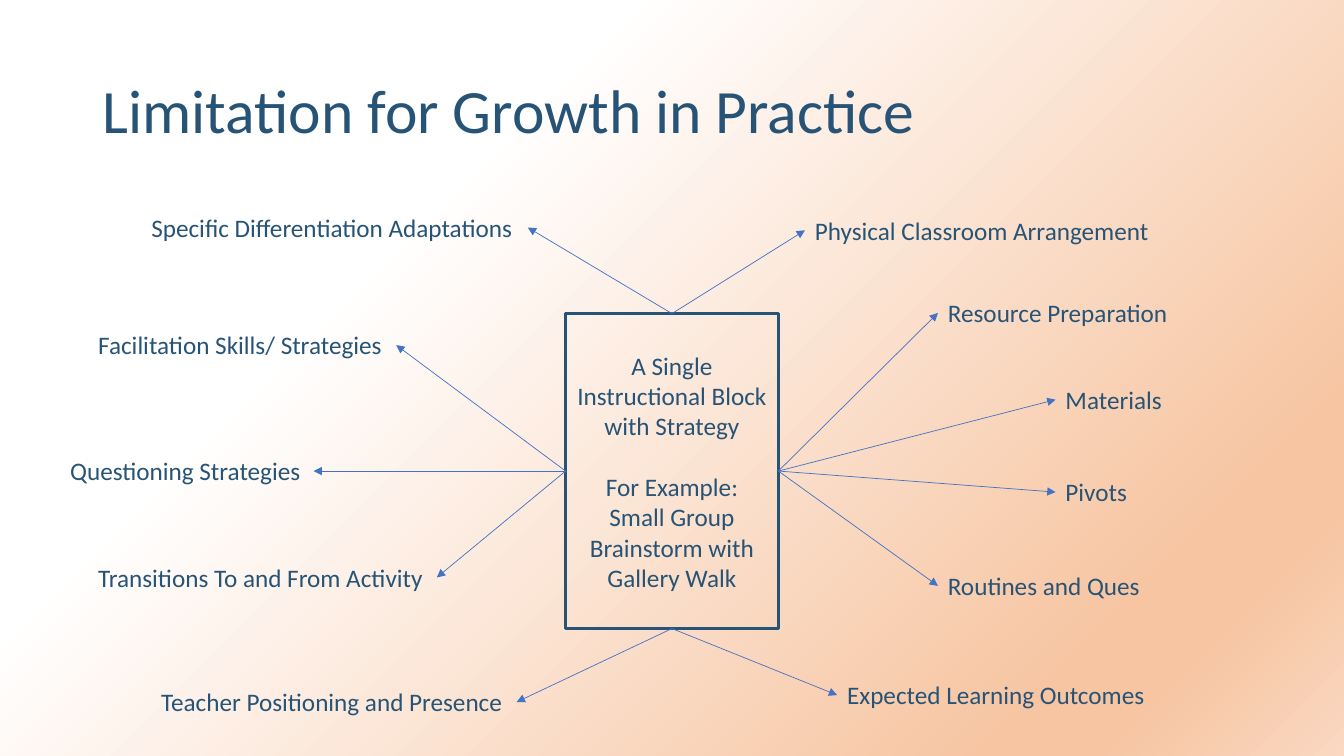
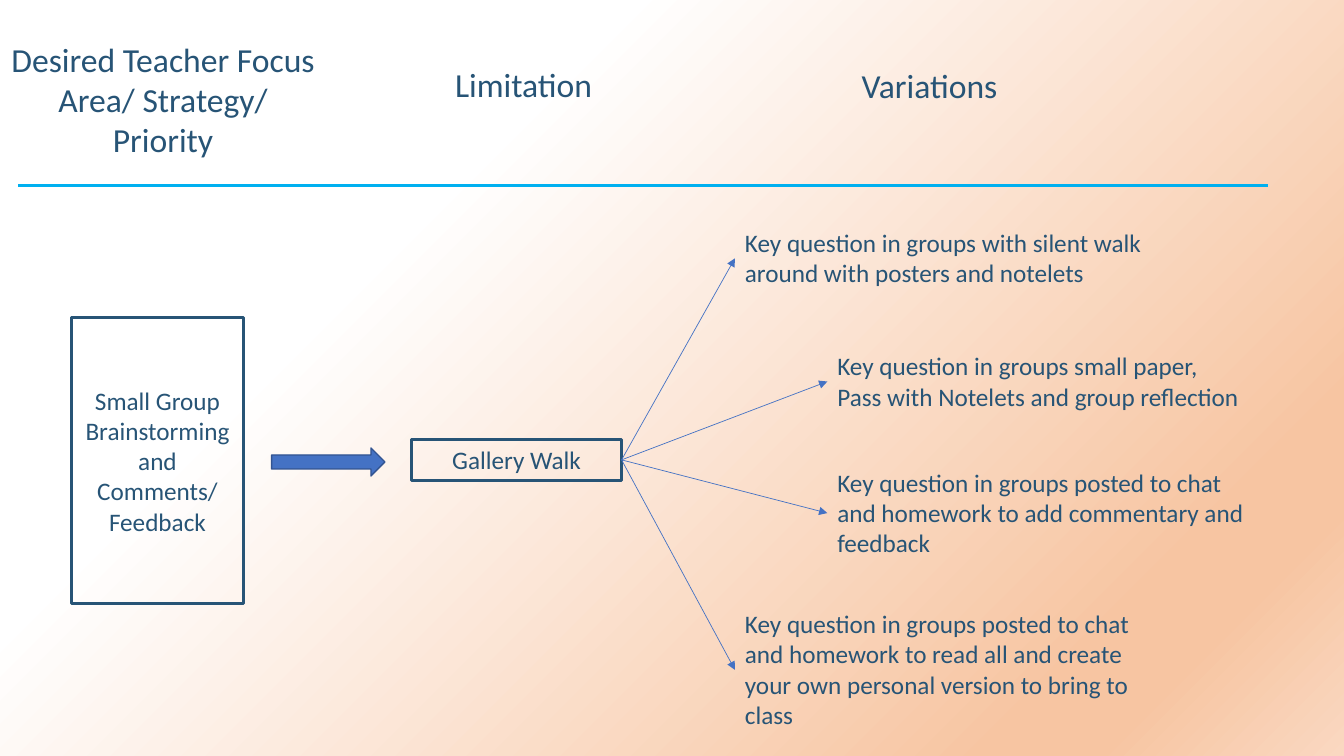
from lxml import etree
from pptx import Presentation
from pptx.dml.color import RGBColor
from pptx.enum.shapes import MSO_CONNECTOR, MSO_SHAPE
from pptx.enum.text import MSO_ANCHOR, MSO_AUTO_SIZE, PP_ALIGN
from pptx.oxml.ns import qn
from pptx.util import Pt

STRAIGHT = MSO_CONNECTOR.STRAIGHT
RECT, ARROW = MSO_SHAPE.RECTANGLE, MSO_SHAPE.RIGHT_ARROW
MIDDLE = MSO_ANCHOR.MIDDLE
GROW = MSO_AUTO_SIZE.SHAPE_TO_FIT_TEXT
LEFT, CENTER = PP_ALIGN.LEFT, PP_ALIGN.CENTER
TOP_SIDE, LEFT_SIDE, LOW_SIDE, RIGHT_SIDE = range(4)

NAVY = RGBColor(0x27, 0x54, 0x76)
BLUE = RGBColor(0x44, 0x72, 0xC4)
EDGE = RGBColor(0x32, 0x54, 0x91)
SKY = RGBColor(0x00, 0xB0, 0xF0)
WHITE = RGBColor(0xFF, 0xFF, 0xFF)
PEACH = RGBColor(0xF7, 0xC5, 0xA2)
PALE = RGBColor(0xFA, 0xD8, 0xC1)

FONT = "Calibri"
WIDE, HIGH = 960, 540
ROW = 29
STOPS = [(30, WHITE), (83, PEACH), (88, PEACH), (100, PALE)]

TITLE = "Limitation for Growth in Practice"
BLOCK = ["A Single Instructional Block with Strategy",
         "For Example: Small Group Brainstorm with Gallery Walk"]
# Each spoke: side of the hub, text, left, top, width, height
SKILLS = [
    (TOP_SIDE, "Specific Differentiation Adaptations", 58, 4, 276, ROW),
    (LEFT_SIDE, "Facilitation Skills/ Strategies", 20, 88, 220, ROW),
    (LEFT_SIDE, "Questioning Strategies", 0, 178, 181, ROW),
    (LEFT_SIDE, "Transitions To and From Activity", 20, 254, 249, ROW),
    (LOW_SIDE, "Teacher Positioning and Presence", 65, 343, 261, ROW),
    (TOP_SIDE, "Physical Classroom Arrangement", 532, 6, 256, ROW),
    (RIGHT_SIDE, "Resource Preparation", 627, 65, 173, ROW),
    (RIGHT_SIDE, "Materials", 711, 127, 84, ROW),
    (RIGHT_SIDE, "Pivots", 711, 193, 59, ROW),
    (RIGHT_SIDE, "Routines and Ques", 627, 260, 153, ROW),
    (LOW_SIDE, "Expected Learning Outcomes", 555, 338, 230, ROW),
]
FOCUS = ["Small Group Brainstorming and Comments/ Feedback"]
IDEAS = [
    (RIGHT_SIDE, "Key question in groups with silent walk around with posters "
     "and notelets", 474, 0, 315, 51),
    (RIGHT_SIDE, "Key question in groups small paper, Pass with Notelets and "
     "group reflection", 540, 88, 303, 51),
    (RIGHT_SIDE, "Key question in groups posted to chat and homework to add "
     "commentary and feedback", 540, 171, 315, 73),
    (RIGHT_SIDE, "Key question in groups posted to chat and homework to read "
     "all and create your own personal version to bring to class",
     474, 272, 315, 95),
]
HEADS = [
    ("Desired Teacher Focus Area/ Strategy/ Priority", 0, 0, 233, 95),
    ("Limitation", 305, 18, 138, 36),
    ("Variations", 596, 19, 136, 36),
]


def place(area, x, y, w, h):
    """Turn a box inside an area into slide lengths."""
    return Pt(area[0] + x), Pt(area[1] + y), Pt(w), Pt(h)


def paint(master):
    """Give the master its diagonal gradient."""
    fill = master.background.fill
    fill.gradient()
    fill.gradient_angle = 315
    stops = master.element.find(".//" + qn("a:gsLst"))
    for old in list(stops):
        stops.remove(old)
    for pos, tone in STOPS:
        stop = etree.SubElement(stops, qn("a:gs"), pos=str(pos * 1000))
        etree.SubElement(stop, qn("a:srgbClr"), val=str(tone))


def write(frame, lines, size, align, gap=0):
    frame.text = "\n".join(lines)
    for i, para in enumerate(frame.paragraphs):
        para.alignment = align
        if i:
            para.space_before = Pt(gap)
        for run in para.runs:
            run.font.name = FONT
            run.font.size = Pt(size)
            run.font.color.rgb = NAVY


def label(slide, box, text, size=18, align=LEFT, wrap=True):
    item = slide.shapes.add_textbox(*box)
    write(item.text_frame, [text], size, align)
    item.text_frame.word_wrap = wrap
    item.text_frame.auto_size = GROW
    return item


def frame(slide, box, lines):
    """Draw an outlined box with centred text."""
    item = slide.shapes.add_shape(RECT, *box)
    item.shadow.inherit = False
    item.fill.background()
    item.line.color.rgb = NAVY
    item.line.width = Pt(2)
    item.text_frame.word_wrap = True
    item.text_frame.vertical_anchor = MIDDLE
    write(item.text_frame, lines, 18, CENTER, 22)
    return item


def line(slide, ends, tone, width):
    item = slide.shapes.add_connector(STRAIGHT, *map(Pt, ends))
    item.line.color.rgb = tone
    item.line.width = Pt(width)
    etree.SubElement(item.element.spPr, qn("a:effectLst"))
    return item


def link(slide, start, side, stop, end):
    """Join two shapes with a thin arrow."""
    item = line(slide, (0, 0, 0, 0), BLUE, 0.5)
    item.begin_connect(start, side)
    item.end_connect(stop, end)
    stroke = item.element.spPr.find(qn("a:ln"))
    etree.SubElement(stroke, qn("a:tailEnd"), type="triangle")


def fan(slide, area, box, lines, spokes, wrap):
    """Draw a hub with arrows to the labels around it."""
    hub = frame(slide, place(area, *box), lines)
    for side, text, x, y, w, h in spokes:
        tip = label(slide, place(area, x, y, w, h), text, wrap=wrap)
        end = LEFT_SIDE if x > box[0] else RIGHT_SIDE
        link(slide, hub, side, tip, end)


def head(slide, box):
    title = slide.shapes.title
    title.left, title.top, title.width, title.height = map(Pt, box)
    title.text_frame.vertical_anchor = MIDDLE
    write(title.text_frame, [TITLE], 44, LEFT)
    title.text_frame.paragraphs[0].line_spacing = 0.9


def band(slide, area):
    """Draw the column heads and the rule under them."""
    for text, *box in HEADS:
        label(slide, place(area, *box), text, 24, CENTER)
    x, y, w, h = area
    line(slide, (x + 13, y + h, x + w, y + h), SKY, 2.5)


def flow(slide, area):
    """Draw the focus box, the block arrow and the variations."""
    frame(slide, place(area, 0, 68, 123, 204), FOCUS)
    arrow = slide.shapes.add_shape(ARROW, *place(area, 143, 161, 81, 20))
    arrow.shadow.inherit = False
    arrow.fill.solid()
    arrow.fill.fore_color.rgb = BLUE
    arrow.line.color.rgb = EDGE
    arrow.line.width = Pt(1)
    fan(slide, area, (243, 155, 150, ROW), ["Gallery Walk"], IDEAS, True)


def main():
    prs = Presentation()
    prs.slide_width, prs.slide_height = Pt(WIDE), Pt(HIGH)
    paint(prs.slide_master)
    titled, blank = prs.slide_layouts[5], prs.slide_layouts[6]

    slide = prs.slides.add_slide(titled)
    head(slide, (66, 29, 828, 104))
    fan(slide, (43, 144, 800, 372), (361, 80, 152, 225), BLOCK, SKILLS, False)

    slide = prs.slides.add_slide(blank)
    band(slide, (0, 24, 906, 108.5))
    flow(slide, (51, 159, 855, 367))

    prs.save("out.pptx")


if __name__ == "__main__":
    main()
